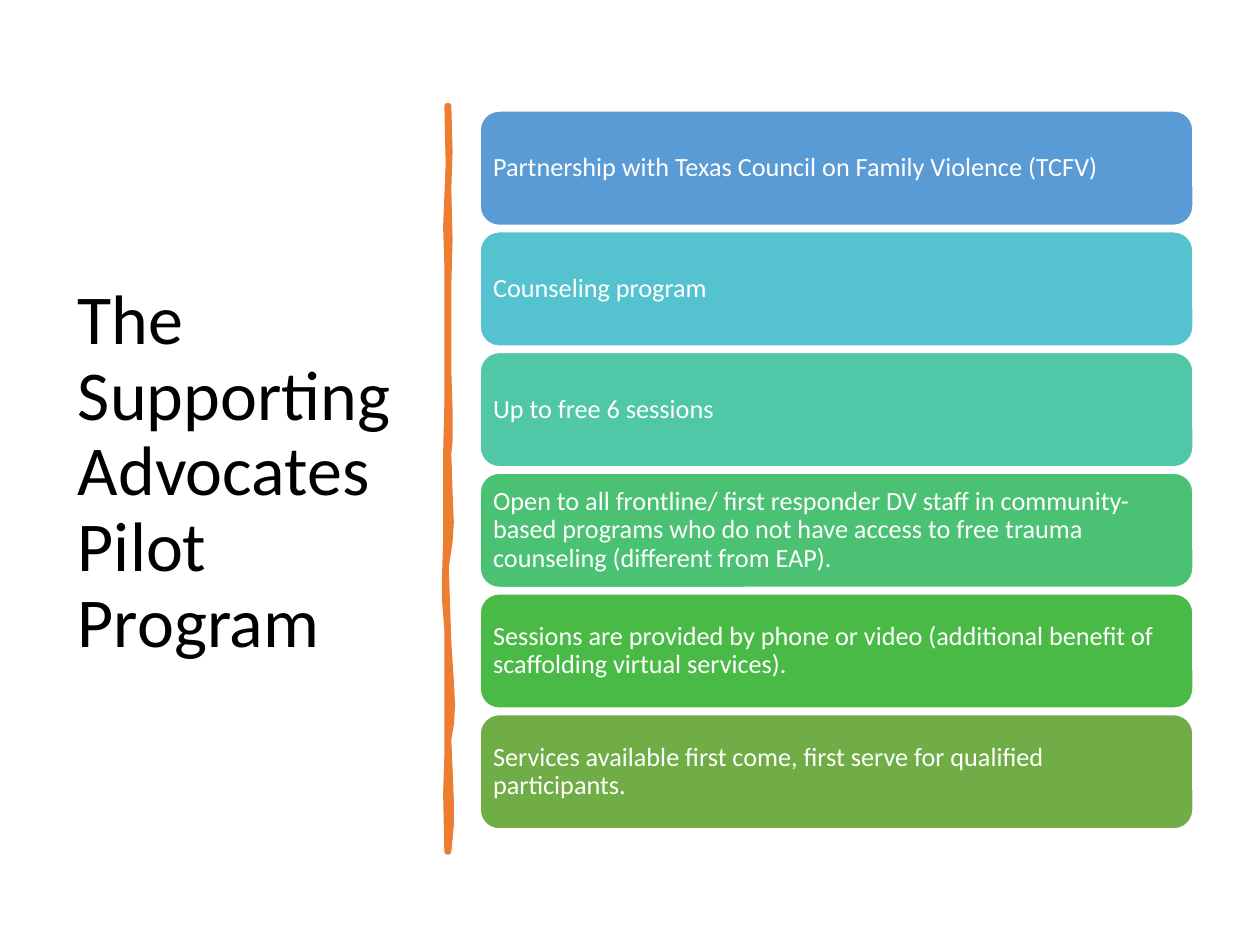
"""Build the slide on the Supporting Advocates Pilot Program."""
from lxml import etree
from pptx import Presentation
from pptx.dml.color import RGBColor
from pptx.enum import shapes, text
from pptx.oxml import ns
from pptx.util import Inches, Pt

BLACK = RGBColor(0x00, 0x00, 0x00)
WHITE = RGBColor(0xFF, 0xFF, 0xFF)
ORANGE = RGBColor(0xED, 0x7D, 0x31)
BLUE = RGBColor(0x5B, 0x9B, 0xD5)
CYAN = RGBColor(0x55, 0xC3, 0xCF)
TEAL = RGBColor(0x50, 0xC8, 0xA7)
MINT = RGBColor(0x4B, 0xC1, 0x74)
GREEN = RGBColor(0x4A, 0xBA, 0x46)
OLIVE = RGBColor(0x70, 0xAD, 0x47)

FACTS = [
    ("Partnership with Texas Council on Family Violence (TCFV)", BLUE),
    ("Counseling program", CYAN),
    ("Up to free 6 sessions", TEAL),
    ("Open to all frontline/ first responder DV staff in community-based programs "
     "who do not have access to free trauma counseling (different from EAP).", MINT),
    ("Sessions are provided by phone or video (additional benefit of "
     "scaffolding virtual services).", GREEN),
    ("Services available first come, first serve for qualified participants.", OLIVE),
]
FACT_TOP, FACT_HEIGHT, FACT_PITCH = 0.88, 0.91, 0.958

BRUSH_EDGE = [
    (3.56, 0.84), (3.57, 1.2), (3.56, 1.5), (3.57, 1.9), (3.56, 2.26),
    (3.56, 2.94), (3.57, 3.25), (3.57, 3.5), (3.56, 3.6), (3.57, 3.9),
    (3.58, 4.15), (3.57, 4.3), (3.54, 4.5), (3.55, 4.8), (3.56, 5.1),
    (3.58, 5.4), (3.59, 5.6), (3.58, 5.75), (3.56, 5.87), (3.57, 6.1),
    (3.58, 6.35), (3.58, 6.55), (3.56, 6.76), (3.55, 6.76), (3.54, 6.3),
    (3.55, 6.0), (3.55, 5.4), (3.55, 5.0), (3.53, 4.75), (3.53, 4.6),
    (3.54, 4.3), (3.54, 3.6), (3.55, 3.2), (3.55, 2.1), (3.54, 1.8),
    (3.56, 1.3), (3.55, 0.84),
]


def write(shape, words, size, color):
    frame = shape.text_frame
    frame.word_wrap = True
    frame.vertical_anchor = text.MSO_ANCHOR.MIDDLE
    line = frame.paragraphs[0]
    line.text = words
    line.alignment = text.PP_ALIGN.LEFT
    line.line_spacing = 0.9
    line.font.name = "Calibri"
    line.font.size = Pt(size)
    line.font.color.rgb = color
    return frame


def paint(shape, fill, outline, width):
    shape.shadow.inherit = False
    shape.fill.solid()
    shape.fill.fore_color.rgb = fill
    shape.line.color.rgb = outline
    shape.line.width = Pt(width)


deck = Presentation()
deck.slide_width, deck.slide_height = Inches(10), Inches(7.5)
slide = deck.slides.add_slide(deck.slide_layouts[6])

title = slide.shapes.add_textbox(Inches(0.52), Inches(0.7), Inches(2.8), Inches(6.11))
write(title, "The Supporting Advocates Pilot Program", 40, BLACK)

edge = [(Inches(x), Inches(y)) for x, y in BRUSH_EDGE]
outline = slide.shapes.build_freeform(*edge[0])
outline.add_line_segments(edge[1:])
brush = outline.convert_to_shape()
paint(brush, ORANGE, ORANGE, 3.25)
etree.SubElement(brush.line._get_or_add_ln(), ns.qn("a:round"))

for row, (fact, color) in enumerate(FACTS):
    card = slide.shapes.add_shape(
        shapes.MSO_SHAPE.ROUNDED_RECTANGLE, Inches(3.81),
        Inches(FACT_TOP + row * FACT_PITCH), Inches(5.66), Inches(FACT_HEIGHT))
    paint(card, color, WHITE, 1)
    frame = write(card, fact, 15, WHITE)
    frame.margin_left = frame.margin_right = Inches(0.06)
    frame.margin_top = frame.margin_bottom = Inches(0.06)

deck.save("out.pptx")
